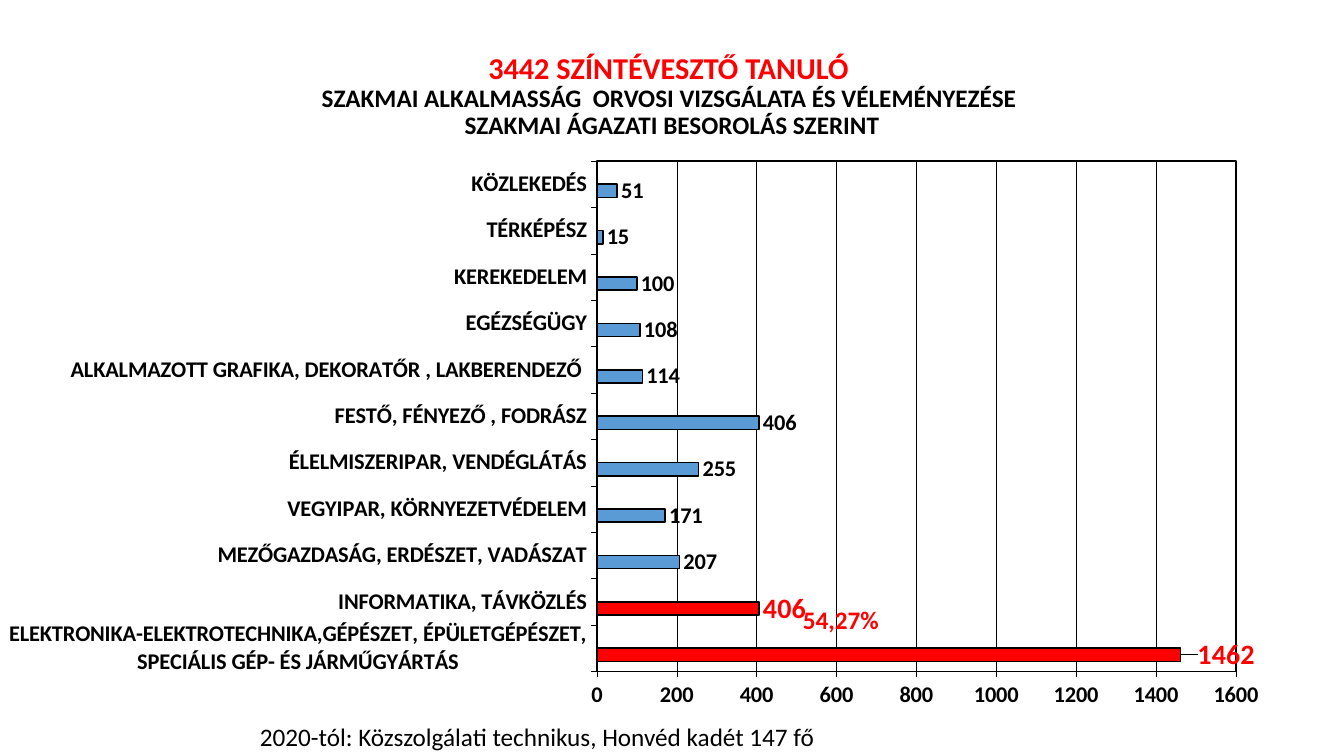
"""Bar chart slide of colour-blind students by vocational sector."""
from lxml import etree
from pptx import Presentation
from pptx.chart.data import CategoryChartData
from pptx.dml.color import RGBColor
from pptx.enum.chart import XL_CHART_TYPE, XL_LABEL_POSITION, XL_TICK_MARK
from pptx.enum.text import MSO_ANCHOR, PP_ALIGN
from pptx.oxml import parse_xml
from pptx.oxml.ns import nsdecls, qn
from pptx.util import Inches, Pt

BAR = XL_CHART_TYPE.BAR_CLUSTERED
OUTSIDE_END = XL_LABEL_POSITION.OUTSIDE_END
TICK_OUT, TICK_NONE = XL_TICK_MARK.OUTSIDE, XL_TICK_MARK.NONE
MIDDLE, TOP = MSO_ANCHOR.MIDDLE, MSO_ANCHOR.TOP
CENTER, LEFT = PP_ALIGN.CENTER, PP_ALIGN.LEFT

COLORS = {"black": "000000", "red": "FF0000", "blue": "5B9BD5"}
HAIRLINE, OUTLINE = 0.28, 1.11

SECTORS = [
    ("ELEKTRONIKA-ELEKTROTECHNIKA,GÉPÉSZET, ÉPÜLETGÉPÉSZET, SPECIÁLIS GÉP- ÉS JÁRMŰGYÁRTÁS", 1462),
    ("INFORMATIKA, TÁVKÖZLÉS", 406),
    ("MEZŐGAZDASÁG, ERDÉSZET, VADÁSZAT", 207),
    ("VEGYIPAR, KÖRNYEZETVÉDELEM", 171),
    ("ÉLELMISZERIPAR, VENDÉGLÁTÁS", 255),
    ("FESTŐ, FÉNYEZŐ , FODRÁSZ", 406),
    ("ALKALMAZOTT GRAFIKA, DEKORATŐR , LAKBERENDEZŐ ", 114),
    ("EGÉZSÉGÜGY", 108),
    ("KEREKEDELEM", 100),
    ("TÉRKÉPÉSZ", 15),
    ("KÖZLEKEDÉS", 51),
]
HIGHLIGHTED = (0, 1)


class SlideBuilder:
    """Holds the style and the current slide, with a method per element."""

    def __init__(self, prs, font="Calibri"):
        self.prs, self.font = prs, font
        self.s = prs.slides.add_slide(prs.slide_layouts[6])

    def box(self, x, y, w, h):
        """Turn shares of the slide into lengths."""
        sw, sh = self.prs.slide_width, self.prs.slide_height
        return int(x * sw), int(y * sh), int(w * sw), int(h * sh)

    def style(self, font, size, color="black", bold=True):
        """Apply the common font format."""
        for name, value in {"name": self.font, "size": Pt(size), "bold": bold}.items():
            setattr(font, name, value)
        font.color.rgb = RGBColor.from_string(COLORS[color])

    def line(self, line, width):
        """Draw a black line of the given width."""
        line.color.rgb = RGBColor.from_string(COLORS["black"])
        line.width = Pt(width)

    def text(self, area, lines, anchor=TOP, align=LEFT, spacing=1.0):
        """Add one paragraph of (text, size, colour, bold) lines."""
        tf = self.s.shapes.add_textbox(*self.box(*area)).text_frame
        for name, value in {"word_wrap": True, "vertical_anchor": anchor}.items():
            setattr(tf, name, value)
        p = tf.paragraphs[0]
        p.alignment, p.line_spacing = align, spacing
        for i, (text, *look) in enumerate(lines):
            if i:
                p.add_line_break()
            r = p.add_run()
            r.text = text
            self.style(r.font, *look)

    def layout(self, **values):
        """Build a manual chart layout element."""
        root = parse_xml(f"<c:layout {nsdecls('c')}><c:manualLayout/></c:layout>")
        for tag, value in values.items():
            etree.SubElement(root[0], qn(f"c:{tag}")).set("val", str(value))
        return root

    def frame_plot(self, chart, x, y, w, h):
        """Place the inner plot area and outline it."""
        area = chart._chartSpace.chart.plotArea
        for old in area.findall(qn("c:layout")):
            area.remove(old)
        area.insert(0, self.layout(layoutTarget="inner", xMode="edge", yMode="edge",
                                   x=x, y=y, w=w, h=h))
        area.append(parse_xml(
            f"<c:spPr {nsdecls('c', 'a')}><a:noFill/><a:ln w='{Pt(OUTLINE)}'><a:solidFill>"
            f"<a:srgbClr val='{COLORS['black']}'/></a:solidFill></a:ln></c:spPr>"))

    def chart(self, area, plot_area, rows, highlighted):
        """Add the bar chart with its highlighted bars."""
        data = CategoryChartData()
        data.categories = [name for name, _ in rows]
        data.add_series("Series 1", [value for _, value in rows])
        data.add_series("Series 2", [None] * len(rows))
        chart = self.s.shapes.add_chart(BAR, *self.box(*area), data).chart
        chart.has_legend = chart.has_title = False
        self.style(chart.font, 16)
        plot = chart.plots[0]
        for name, value in {"gap_width": 150, "overlap": 0, "vary_by_categories": False}.items():
            setattr(plot, name, value)
        for axis in (chart.category_axis, chart.value_axis):
            axis.major_tick_mark, axis.minor_tick_mark = TICK_OUT, TICK_NONE
            self.line(axis.format.line, HAIRLINE)
            self.style(axis.tick_labels.font, 16)
        axis = chart.value_axis
        for name, value in {"minimum_scale": 0, "maximum_scale": 1600, "major_unit": 200,
                            "has_major_gridlines": True}.items():
            setattr(axis, name, value)
        self.line(axis.major_gridlines.format.line, HAIRLINE)
        for series, color in zip(plot.series, ("blue", "red")):
            self.fill(series.format, color)
            labels = series.data_labels
            labels.show_value, labels.position = True, OUTSIDE_END
            self.style(labels.font, 16)
        for i in highlighted:
            point = plot.series[0].points[i]
            self.fill(point.format, "red")
            self.style(point.data_label.font, 20, "red")
            point.data_label.position = OUTSIDE_END
        first = plot.series[0].data_labels._element.find(qn("c:dLbl"))
        first.insert(1, self.layout(x=0.01, y=0))
        self.frame_plot(chart, *plot_area)

    def fill(self, fmt, color):
        """Fill bars and outline them in black."""
        fmt.fill.solid()
        fmt.fill.fore_color.rgb = RGBColor.from_string(COLORS[color])
        self.line(fmt.line, OUTLINE)


def main():
    """Build and save the slide."""
    prs = Presentation()
    prs.slide_width, prs.slide_height = Inches(13.33), Inches(7.5)
    slide = SlideBuilder(prs)
    slide.text((0.05, 0.06, 0.9, 0.136), [
        ("3442 SZÍNTÉVESZTŐ TANULÓ ", 21.6, "red"),
        ("SZAKMAI ALKALMASSÁG  ORVOSI VIZSGÁLATA ÉS VÉLEMÉNYEZÉSE ", 18),
        ("SZAKMAI ÁGAZATI BESOROLÁS SZERINT", 18),
    ], MIDDLE, CENTER, 0.9)
    slide.chart((0, 0.212, 0.949, 0.788), (0.468, 0, 0.501, 0.858), SECTORS, HIGHLIGHTED)
    slide.text((0.186, 0.947, 0.7, 0.053),
               [("2020-tól: Közszolgálati technikus, Honvéd kadét 147 fő", 18, "black", False)])
    slide.text((0.59, 0.793, 0.115, 0.053), [("54,27%", 18, "red")])
    prs.save("out.pptx")


if __name__ == "__main__":
    main()
